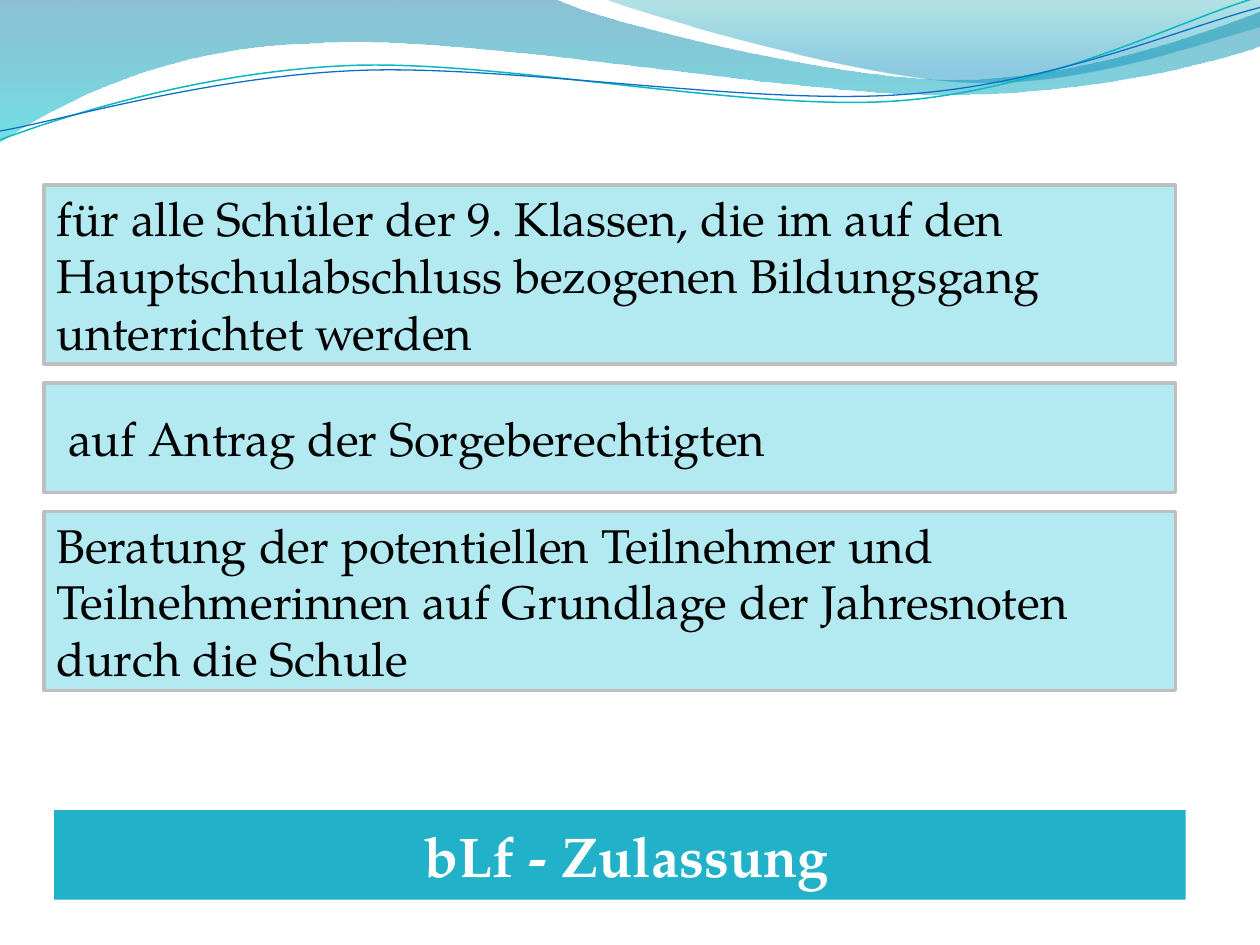
"""Build the admission slide with its wave header and three stacked boxes."""
from itertools import chain
from math import cos, radians, sin

from lxml import etree
from pptx import Presentation
from pptx.dml.color import RGBColor
from pptx.enum.shapes import MSO_SHAPE
from pptx.enum.text import MSO_ANCHOR, MSO_AUTO_SIZE, PP_ALIGN
from pptx.oxml.ns import qn
from pptx.util import Inches, Pt

RECT = MSO_SHAPE.RECTANGLE
MID = MSO_ANCHOR.MIDDLE
FIXED = MSO_AUTO_SIZE.NONE
LEFT, CENTER = PP_ALIGN.LEFT, PP_ALIGN.CENTER

COLS, ROWS = 10, 7.5
WIDTH, HEIGHT = Inches(COLS), Inches(ROWS)
FONT = "TeX Gyre Pagella"
TILT = 2.7
BOX_X, BOX_Y, BOX_W, GAP = 0.35, 1.47, 8.98, 0.15

WHITE = RGBColor(0xFF, 0xFF, 0xFF)
BLACK = RGBColor(0x00, 0x00, 0x00)
GREY = RGBColor(0xBF, 0xBF, 0xBF)
PALE = RGBColor(0xB3, 0xEA, 0xF2)
TEAL = RGBColor(0x21, 0xB2, 0xC9)
AQUA = RGBColor(0x0A, 0xB8, 0xBF)
BLUE = RGBColor(0x0F, 0x6F, 0xC6)
DEEP = RGBColor(0x00, 0x74, 0xA1)
CYAN = RGBColor(0x00, 0xC6, 0xCF)
SEA = RGBColor(0x00, 0xA1, 0xA9)
SKY = RGBColor(0x00, 0x8B, 0xBF)

BANDS = [
    ([(0, 0), (4.4, -0.01),
      (4.76, 0.17, 6.64, 0.63, 7.58, 0.63),
      (8.53, 0.63, 9.58, 0.26, 10, 0.09), (10.01, 0.36),
      (9.83, 0.44, 8.7, 0.76, 7.46, 0.75),
      (6.22, 0.75, 3.82, 0.28, 2.57, 0.34),
      (1.29, 0.36, 0.46, 0.83, -0.01, 1.13)],
     [(0, DEEP, 45), (1, CYAN, 55)]),
    ([(4.79, -0.01),
      (5.09, 0.11, 6.82, 0.62, 7.69, 0.65),
      (8.56, 0.69, 9.61, 0.32, 10, 0.21), (10, 0)],
     [(0, SEA, 30), (0.8, SKY, 45)]),
]
LINES = [
    ([(0, 1.11),
      (0.48, 0.93, 1.58, 0.57, 2.77, 0.52),
      (3.95, 0.47, 5.93, 0.89, 7.13, 0.8),
      (8.33, 0.71, 9.38, 0.15, 9.98, -0.02)], (4.99, 0.58), AQUA, 0.85),
    ([(0, 1.04),
      (0.47, 0.96, 1.64, 0.61, 2.83, 0.56),
      (4.03, 0.51, 5.97, 0.84, 7.17, 0.75),
      (8.36, 0.67, 9.41, 0.21, 10, 0.06)], (5, 0.59), BLUE, 0.75),
]
BOXES = [
    (1.42, "für alle Schüler der 9. Klassen, die im auf den "
           "Hauptschulabschluss bezogenen Bildungsgang unterrichtet werden"),
    (0.87, " auf Antrag der Sorgeberechtigten"),
    (1.42, "Beratung der potentiellen Teilnehmer und Teilnehmerinnen "
           "auf Grundlage der Jahresnoten durch die Schule"),
]


def place(col, row):
    """Turn a grid position into slide units."""
    return round(col * WIDTH / COLS), round(row * HEIGHT / ROWS)


def pairs(part):
    """Split a flat run of numbers into points."""
    return list(zip(part[::2], part[1::2]))


def turn(part, mid):
    """Turn the points of one part clockwise about a centre."""
    c, s = cos(radians(TILT)), sin(radians(TILT))
    x0, y0 = mid
    return tuple(chain.from_iterable(
        (x0 + (x - x0) * c - (y - y0) * s, y0 + (x - x0) * s + (y - y0) * c)
        for x, y in pairs(part)))


def draw(shapes, route, close):
    """Draw corners and cubic curves as one freeform."""
    first, *rest = [place(*p) for part in route for p in pairs(part)]
    pen = shapes.build_freeform(*first)
    pen.add_line_segments(rest, close=close)
    shape = pen.convert_to_shape()
    shape.shadow.inherit = False
    legs = iter(list(shape.element.spPr.iter(qn("a:lnTo"))))
    for part in route[1:]:
        group = [next(legs) for _ in pairs(part)]
        if len(group) == 3:
            curve = etree.Element(qn("a:cubicBezTo"))
            group[0].addprevious(curve)
            for leg in group:
                curve.append(leg[0])
                leg.getparent().remove(leg)
    return shape


def add_band(shapes, route, stops):
    """Add a wave filled with a see-through gradient."""
    shape = draw(shapes, route, True)
    shape.line.fill.background()
    shape.fill.gradient()
    shape.fill.gradient_angle = 270
    for stop, (pos, color, _) in zip(shape.fill.gradient_stops, stops):
        stop.position = pos
        stop.color.rgb = color
    tints = list(shape.element.spPr.iter(qn("a:srgbClr")))
    for tint, (_, _, share) in zip(tints, stops):
        etree.SubElement(tint, qn("a:alpha")).set("val", str(share * 1000))


def add_line(shapes, route, mid, color, width):
    """Add a thin tilted curve."""
    shape = draw(shapes, [turn(part, mid) for part in route], False)
    shape.rotation = -TILT
    shape.fill.background()
    shape.line.color.rgb = color
    shape.line.width = Pt(width)


def write(shape, text, size=27, color=BLACK, bold=False, align=LEFT):
    """Put formatted text into a shape."""
    frame = shape.text_frame
    frame.word_wrap = True
    frame.auto_size = FIXED
    frame.vertical_anchor = MID
    para = frame.paragraphs[0]
    para.alignment = align
    run = para.add_run()
    run.text = text
    font = run.font
    font.name, font.size, font.bold = FONT, Pt(size), bold
    font.color.rgb = color


def add_box(shapes, top, height, text):
    """Add one framed text box."""
    shape = shapes.add_shape(RECT, *place(BOX_X, top), *place(BOX_W, height))
    shape.shadow.inherit = False
    shape.fill.solid()
    shape.fill.fore_color.rgb = PALE
    shape.line.color.rgb = GREY
    shape.line.width = Pt(2)
    write(shape, text)


def set_title(title, text):
    """Move the title to the foot of the slide and format it."""
    title.left, title.top = place(0.43, 6.43)
    title.width, title.height = place(BOX_W, 0.71)
    title.fill.solid()
    title.fill.fore_color.rgb = TEAL
    write(title, text, size=32, color=WHITE, bold=True, align=CENTER)


def main():
    """Build and save the slide."""
    deck = Presentation()
    deck.slide_width, deck.slide_height = WIDTH, HEIGHT
    slide = deck.slides.add_slide(deck.slide_layouts.get_by_name("Title Only"))
    shapes = slide.shapes
    for band in BANDS:
        add_band(shapes, *band)
    pair = shapes.add_group_shape()
    for line in LINES:
        add_line(pair.shapes, *line)
    set_title(shapes.title, " bLf - Zulassung")
    top = BOX_Y
    for height, text in BOXES:
        add_box(shapes, top, height, text)
        top += height + GAP
    deck.save("out.pptx")


if __name__ == "__main__":
    main()
